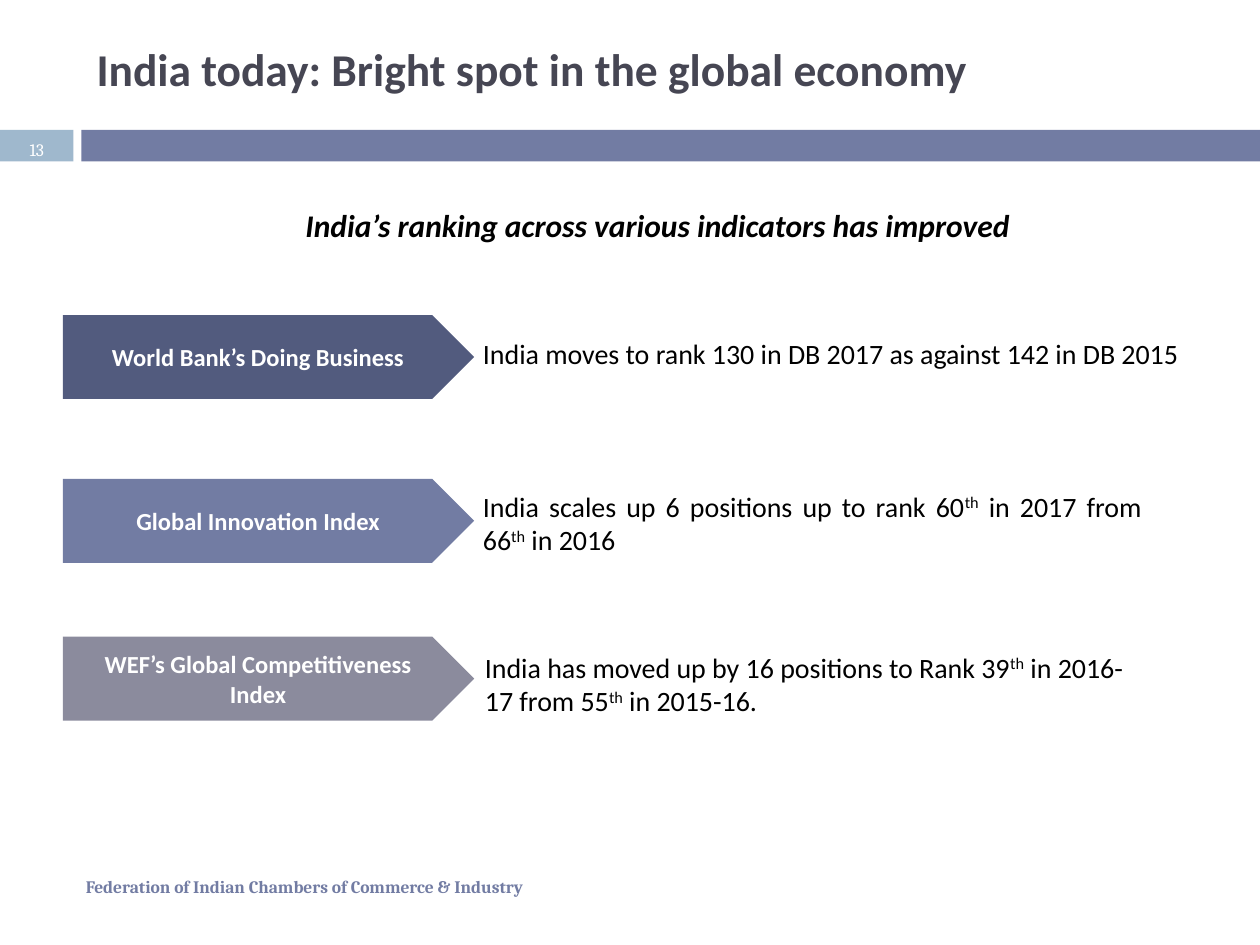
from pptx import Presentation
from pptx import util as u
from pptx.dml.color import RGBColor
from pptx.enum import shapes, text

COLORS = {
    "band": "727CA3", "tab": "9FB8CD", "title": "464653", "ink": "000000",
    "white": "FFFFFF", "navy": "525B7E", "grey": "8B8B9D",
}
LEFT, CENTER, JUSTIFY = (text.PP_ALIGN.LEFT, text.PP_ALIGN.CENTER,
                         text.PP_ALIGN.JUSTIFY)
TOP, MIDDLE = text.MSO_ANCHOR.TOP, text.MSO_ANCHOR.MIDDLE
RECT, PENTAGON = shapes.MSO_SHAPE.RECTANGLE, shapes.MSO_SHAPE.PENTAGON


class Deck:
    """Holds the text styles and the slide being built."""

    styles = {
        "title": dict(name="Calibri", size=u.Pt(26), bold=True),
        "subtitle": dict(name="Calibri", size=u.Pt(18), bold=True, italic=True),
        "label": dict(name="Calibri", size=u.Pt(14), bold=True),
        "body": dict(name="Calibri", size=u.Pt(16)),
        "footer": dict(name="Cambria", size=u.Pt(10), bold=True),
        "number": dict(name="Cambria", size=u.Pt(10)),
    }

    def __init__(self, prs):
        self.s = prs.slides.add_slide(prs.slide_layouts[5])

    def fill_text(self, sp, words, style, color, align=LEFT, anchor=TOP, inset=7.2):
        """Fill a shape with text; '^' separates plain and superscript pieces."""
        tf = sp.text_frame
        settings = dict(word_wrap=True, auto_size=text.MSO_AUTO_SIZE.NONE,
                        vertical_anchor=anchor, margin_left=u.Pt(inset))
        for key, value in settings.items():
            setattr(tf, key, value)
        p = tf.paragraphs[0]
        p.alignment = align
        for i, piece in enumerate(words.split("^")):
            r = p.add_run()
            r.text = piece
            for key, value in self.styles[style].items():
                setattr(r.font, key, value)
            r.font.color.rgb = RGBColor.from_string(COLORS[color])
            if i % 2:
                r._r.get_or_add_rPr().set("baseline", "30000")

    def title(self, box, words):
        sp = self.s.shapes.title
        for key, value in zip(("left", "top", "width", "height"), box):
            setattr(sp, key, u.Pt(value))
        self.fill_text(sp, words, "title", "title", anchor=MIDDLE)

    def text(self, box, words, style, color, **layout):
        sp = self.s.shapes.add_textbox(*map(u.Pt, box))
        self.fill_text(sp, words, style, color, **layout)

    def shape(self, kind, box, fill):
        sp = self.s.shapes.add_shape(kind, *map(u.Pt, box))
        sp.shadow.inherit = False
        sp.fill.solid()
        sp.fill.fore_color.rgb = RGBColor.from_string(COLORS[fill])
        sp.line.fill.background()
        return sp

    def label(self, top, words, fill):
        sp = self.shape(PENTAGON, (36, top, 235, 48), fill)
        self.fill_text(sp, words, "label", "white", align=CENTER, anchor=MIDDLE)


def main():
    prs = Presentation()
    prs.slide_width, prs.slide_height = u.Pt(720), u.Pt(540)
    deck = Deck(prs)

    deck.shape(RECT, (0, 74.2, 42, 18), "tab")
    deck.shape(RECT, (46.5, 74.2, 673.5, 18), "band")
    deck.text((42, 492, 462, 29),
              "Federation of Indian Chambers of Commerce & Industry",
              "footer", "band", anchor=MIDDLE)
    deck.title((48, 6, 642, 66), "India today: Bright spot in the global economy")
    deck.text((0, 76, 42, 19), "13", "number", "white",
              align=CENTER, anchor=MIDDLE)
    deck.text((54, 114, 648, 29),
              "India’s ranking across various indicators has improved ",
              "subtitle", "ink", align=CENTER)

    # Label top, label, fill, box of the finding, finding, alignment, left inset
    rankings = [
        (180, "World Bank’s Doing Business", "navy", (264, 188.6, 420, 27),
         "India moves to rank 130 in DB 2017 as against 142 in DB 2015",
         JUSTIFY, 12),
        (273.6, "Global Innovation Index", "band", (264, 276, 395.5, 46),
         "India scales up 6 positions up to rank 60^th^ in 2017 from 66^th^ in 2016",
         JUSTIFY, 12),
        (363.8, "WEF’s Global Competitiveness Index", "grey", (270, 368, 389.5, 46),
         "India has moved up by 16 positions to Rank 39^th^ in 2016-17"
         " from 55^th^ in 2015-16.", LEFT, 7.2),
    ]
    for top, name, fill, box, finding, align, inset in rankings:
        deck.label(top, name, fill)
        deck.text(box, finding, "body", "ink", align=align, inset=inset)

    prs.save("out.pptx")


if __name__ == "__main__":
    main()
